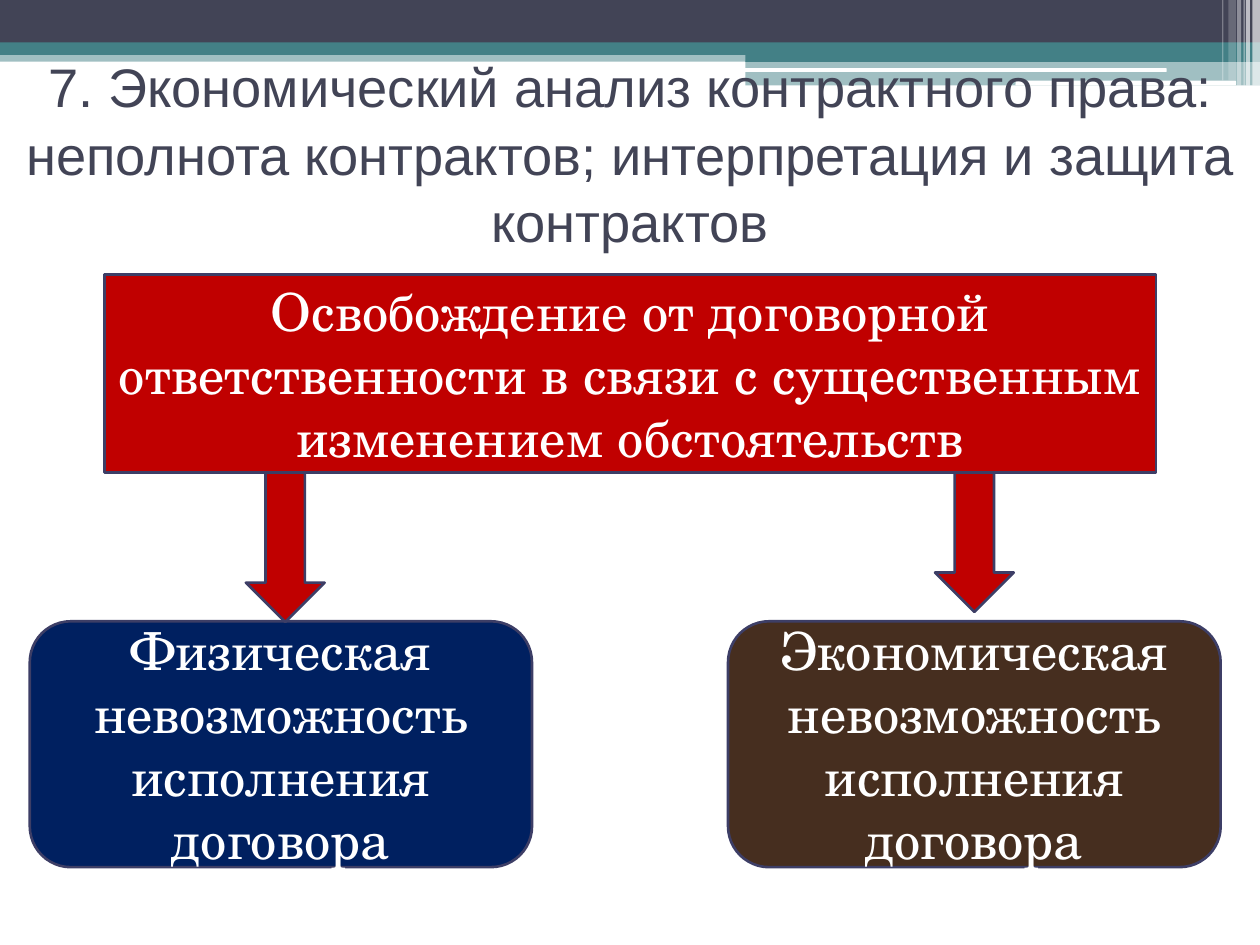
from dataclasses import dataclass

from lxml import etree
from pptx import Presentation
from pptx.dml.color import RGBColor
from pptx.enum.shapes import MSO_SHAPE
from pptx.enum.text import MSO_ANCHOR, MSO_AUTO_SIZE, PP_ALIGN
from pptx.oxml.ns import qn
from pptx.util import Pt

RECTANGLE = MSO_SHAPE.RECTANGLE
ROUNDED = MSO_SHAPE.ROUNDED_RECTANGLE
DOWN_ARROW = MSO_SHAPE.DOWN_ARROW
MIDDLE = MSO_ANCHOR.MIDDLE
CENTER = PP_ALIGN.CENTER
NO_AUTO_SIZE = MSO_AUTO_SIZE.NONE
TITLE_ONLY = 5


@dataclass(frozen=True)
class Theme:
    slate: str = "424456"
    teal: str = "438086"
    white: str = "FFFFFF"
    red: str = "C00000"
    navy: str = "002060"
    brown: str = "462E1F"
    outline: str = "3D3E66"
    outline_width: float = 1.5
    title_font: str = "Arial"
    title_size: int = 31
    box_font: str = "TeX Gyre Schola"
    box_size: int = 30


class SlideBuilder:
    """Holds the theme and the current page."""

    def __init__(self, page, theme):
        self.page = page
        self.theme = theme

    def set_text(self, shape, text, font, size, color, line_spacing=1.0):
        frame = shape.text_frame
        frame.text = text
        frame_format = {"word_wrap": True, "auto_size": NO_AUTO_SIZE,
                        "vertical_anchor": MIDDLE}
        para_format = {"alignment": CENTER, "line_spacing": line_spacing}
        span_format = {"name": font, "size": Pt(size), "bold": False}
        para = frame.paragraphs[0]
        span = para.runs[0]
        for target, values in ((frame, frame_format), (para, para_format),
                               (span.font, span_format)):
            for name, value in values.items():
                setattr(target, name, value)
        span.font.color.rgb = RGBColor.from_string(color)

    def shape(self, kind, bounds, color):
        shape = self.page.shapes.add_shape(kind, *map(Pt, bounds))
        shape.shadow.inherit = False
        shape.fill.solid()
        shape.fill.fore_color.rgb = RGBColor.from_string(color)
        return shape

    def band(self, bounds, color, opacity=100, kind=RECTANGLE):
        band = self.shape(kind, bounds, color)
        band.line.fill.background()
        if opacity < 100:
            tint = band.fill._xPr.find(".//" + qn("a:srgbClr"))
            etree.SubElement(tint, qn("a:alpha"), val=str(opacity * 1000))

    def outlined(self, kind, bounds, color):
        shape = self.shape(kind, bounds, color)
        shape.line.color.rgb = RGBColor.from_string(self.theme.outline)
        shape.line.width = Pt(self.theme.outline_width)
        return shape

    def box(self, kind, bounds, color, text):
        box = self.outlined(kind, bounds, color)
        self.set_text(box, text, self.theme.box_font, self.theme.box_size,
                      self.theme.white)

    def arrow(self, bounds):
        self.outlined(DOWN_ARROW, bounds, self.theme.red)

    def title(self, bounds, text):
        title = self.page.shapes.title
        for name, value in zip(("left", "top", "width", "height"), bounds):
            setattr(title, name, Pt(value))
        self.set_text(title, text, self.theme.title_font,
                      self.theme.title_size, self.theme.slate,
                      line_spacing=1.04)
        # The title lies over the header bands
        self.page.shapes._spTree.append(title._element)


def main():
    theme = Theme()
    deck = Presentation()
    deck.slide_width, deck.slide_height = Pt(720), Pt(540)
    page = deck.slides.add_slide(deck.slide_layouts[TITLE_ONLY])
    builder = SlideBuilder(page, theme)

    # Header bands
    builder.band((0, 28.8, 720, 6.5), theme.teal, 50)
    builder.band((0, 0, 720, 24.5), theme.slate)
    builder.band((0, 24.2, 720, 7.2), theme.teal)
    builder.band((426, 28.2, 294, 7.2), theme.teal)
    builder.band((426, 34.6, 294, 14.2), theme.teal, 50)
    builder.band((425.5, 39, 241.2, 2.1), theme.white, kind=ROUNDED)
    builder.band((580.3, 46.1, 126, 2.7), theme.white, kind=ROUNDED)

    # Translucent stripes in the corner: left, width, height, opacity
    for left, width, height, opacity in (
            (715.7, 4.3, 49, 65), (712, 2.2, 49, 65), (710.6, 0.7, 49, 60),
            (707, 2.2, 49, 40), (702, 4.3, 46, 20), (698.4, 0.7, 46, 30)):
        builder.band((left, 0, width, height), theme.white, opacity)

    # Cause and its two outcomes
    cause_top, cause_bottom = 157, 270
    outcome_top, outcome_height = 355, 140.5
    builder.box(RECTANGLE, (59.7, cause_top, 601, cause_bottom - cause_top),
                theme.red,
                "Освобождение от договорной ответственности в связи с "
                "существенным изменением обстоятельств")
    for kind, left, width, color, arrow_left, arrow_height in (
            ("Физическая", 17, 287, theme.navy, 140.5, 85.5),
            ("Экономическая", 416, 281.5, theme.brown, 534.3, 79.7)):
        builder.box(ROUNDED, (left, outcome_top, width, outcome_height), color,
                    f"{kind} невозможность исполнения договора")
        builder.arrow((arrow_left, cause_bottom, 45, arrow_height))

    builder.title((0, 34, 720, 106),
                  "7. Экономический анализ контрактного права: неполнота "
                  "контрактов; интерпретация и защита контрактов")
    deck.save("out.pptx")


if __name__ == "__main__":
    main()
